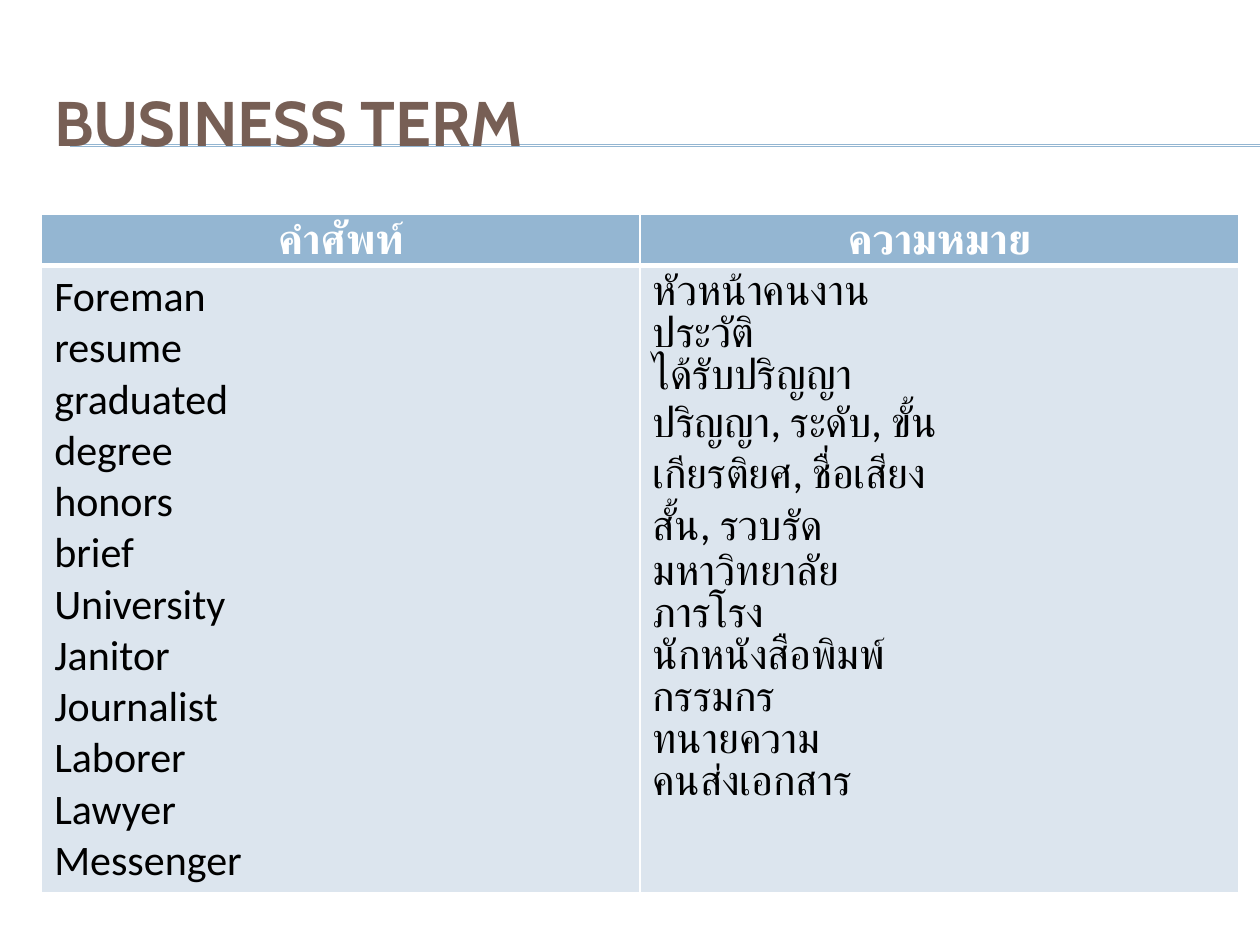
from lxml.etree import SubElement
from pptx import Presentation
from pptx.dml.color import RGBColor
from pptx.enum.shapes import MSO_CONNECTOR
from pptx.enum.text import MSO_ANCHOR, PP_ALIGN
from pptx.oxml.ns import qn
from pptx.util import Cm, Pt

BLUE, PALE, BROWN, WHITE, BLACK = "94B6D2", "DCE5EE", "775F55", "FFFFFF", "000000"
HEADINGS = ["คำศัพท์", "ความหมาย"]
TERMS = [
    ("Foreman", "หัวหน้าคนงาน"),
    ("resume", "ประวัติ"),
    ("graduated", "ได้รับปริญญา"),
    ("degree", "ปริญญา, ระดับ, ขั้น"),
    ("honors", "เกียรติยศ, ชื่อเสียง"),
    ("brief", "สั้น, รวบรัด"),
    ("University", "มหาวิทยาลัย"),
    ("Janitor", "ภารโรง"),
    ("Journalist", "นักหนังสือพิมพ์"),
    ("Laborer", "กรรมกร"),
    ("Lawyer", "ทนายความ"),
    ("Messenger", "คนส่งเอกสาร"),
]


def format_font(font, color, **values):
    for name, value in values.items():
        setattr(font, name, value)
    font.color.rgb = RGBColor.from_string(color)


def add_borders(cell, bottom_width):
    """Draw white borders, 1 pt except for the bottom one."""
    properties = cell._tc.get_or_add_tcPr()
    widths = {"a:lnL": 1, "a:lnR": 1, "a:lnT": 1, "a:lnB": bottom_width}
    for index, (tag, width) in enumerate(widths.items()):
        line = properties.makeelement(qn(tag), {"w": str(Pt(width))})
        fill = SubElement(line, qn("a:solidFill"))
        SubElement(fill, qn("a:srgbClr"), val=WHITE)
        properties.insert(index, line)


presentation = Presentation()
presentation.slide_width, presentation.slide_height = Cm(25.4), Cm(19.05)
slide = presentation.slides.add_slide(presentation.slide_layouts[5])

# Title
title = slide.shapes.title
title.left, title.top, title.width, title.height = Cm(0.84), Cm(1.27), Cm(24.13), Cm(2.34)
title.text_frame.text = "BUSINESS TERM"
title.text_frame.vertical_anchor = MSO_ANCHOR.MIDDLE
paragraph = title.text_frame.paragraphs[0]
paragraph.alignment = PP_ALIGN.LEFT
format_font(paragraph.runs[0].font, BROWN, name="Cabin", size=Pt(36), bold=True)

# Double rule behind the title
for y in (2.92, 2.95):
    rule = slide.shapes.add_connector(MSO_CONNECTOR.STRAIGHT, Cm(1.42), Cm(y), Cm(25.4), Cm(y))
    rule.line.color.rgb = RGBColor.from_string(BLUE)
    rule.line.width = Pt(0.75)
    SubElement(rule._element.spPr, qn("a:effectLst"))
    title._element.addprevious(rule._element)

# Vocabulary table: one heading row, one row holding a list per column
table = slide.shapes.add_table(2, 2, Cm(0.84), Cm(4.32), Cm(24.13), Cm(13.61)).table
table.rows[0].height, table.rows[1].height = Cm(1.03), Cm(12.58)

for column, (heading, words) in enumerate(zip(HEADINGS, zip(*TERMS))):
    for row, lines in enumerate([[heading], words]):
        is_heading = row == 0
        cell = table.cell(row, column)
        cell.fill.solid()
        cell.fill.fore_color.rgb = RGBColor.from_string(BLUE if is_heading else PALE)
        add_borders(cell, 3 if is_heading else 1)
        if is_heading:
            cell.margin_left = cell.margin_right = Cm(0.18)
            cell.margin_top = cell.margin_bottom = 0
        cell.text = "\n".join(lines)
        for paragraph in cell.text_frame.paragraphs:
            if is_heading:
                paragraph.alignment = PP_ALIGN.CENTER
                paragraph.line_spacing = 1.15
            format_font(paragraph.runs[0].font, WHITE if is_heading else BLACK,
                        name="Calibri", size=Pt(24), bold=is_heading)

presentation.save("out.pptx")
